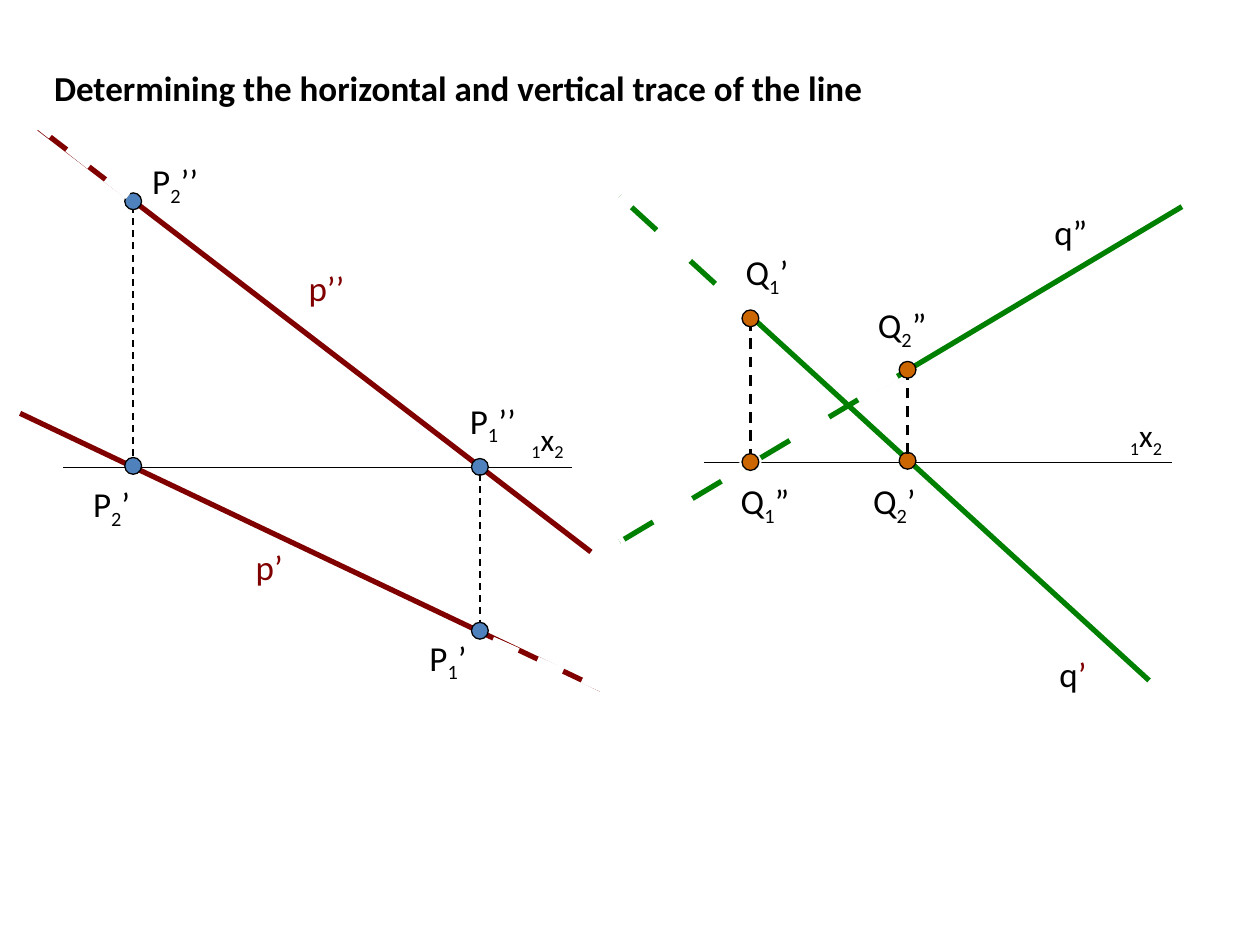
from dataclasses import dataclass

from lxml import etree
from pptx import Presentation
from pptx.dml.color import RGBColor
from pptx.enum.dml import MSO_LINE
from pptx.enum.shapes import MSO_CONNECTOR, MSO_SHAPE
from pptx.enum.text import MSO_AUTO_SIZE
from pptx.oxml.ns import qn
from pptx.util import Pt

DASH = MSO_LINE.DASH
STRAIGHT = MSO_CONNECTOR.STRAIGHT
OVAL = MSO_SHAPE.OVAL
FIT = MSO_AUTO_SIZE.SHAPE_TO_FIT_TEXT


@dataclass(frozen=True)
class Theme:
    font: str = "Calibri"
    ink: str = "000000"
    paper: str = "FFFFFF"
    red: str = "800000"
    green: str = "008000"
    blue: str = "4F81BD"
    orange: str = "CC6600"
    text: float = 20
    small: float = 18
    bold: float = 3
    hair: float = 0.75
    dot: float = 9.6


@dataclass(frozen=True)
class Line:
    x1: float
    y1: float
    x2: float
    y2: float
    color: str
    width: float
    dashed: bool = False


@dataclass(frozen=True)
class Label:
    """A caption; "_" lowers the next sign, "^" turns it red."""
    text: str
    x: float
    y: float
    width: float
    height: float = 31
    color: str = "000000"
    size: float = 20
    bold: bool = False
    fit: bool = True


@dataclass(frozen=True)
class Trace:
    """A marked point, its label and an optional vertical tie (y1, y2)."""
    x: float
    y: float
    fill: str
    label: Label
    tie: tuple[float, float] | None = None
    weight: float = 1


LOOK = Theme()


def draw_line(shapes, line: Line) -> None:
    ends = (Pt(v) for v in (line.x1, line.y1, line.x2, line.y2))
    shape = shapes.add_connector(STRAIGHT, *ends)
    shape.line.color.rgb = RGBColor.from_string(line.color)
    shape.line.width = Pt(line.width)
    if line.dashed:
        shape.line.dash_style = DASH
    etree.SubElement(shape._element.spPr, qn("a:effectLst"))


def draw_label(shapes, label: Label) -> None:
    box = shapes.add_textbox(Pt(label.x), Pt(label.y),
                             Pt(label.width), Pt(label.height))
    frame = box.text_frame
    frame.word_wrap = True
    if label.fit:
        frame.auto_size = FIT
    para = frame.paragraphs[0]
    para.font.name = LOOK.font
    para.font.size = Pt(label.size)
    para.font.bold = label.bold
    para.font.color.rgb = RGBColor.from_string(label.color)

    # Split at the marks; each mark covers one sign
    parts, mark = [["", ""]], ""
    for sign in label.text:
        if sign in "_^":
            mark = sign
        elif mark or parts[-1][0]:
            parts.append([mark, sign])
            mark = ""
        else:
            parts[-1][1] += sign
    for mark, text in parts:
        if not text:
            continue
        run = para.add_run()
        run.text = text
        if mark == "_":
            run._r.get_or_add_rPr().set("baseline", "-25000")
        elif mark == "^":
            run.font.color.rgb = RGBColor.from_string(LOOK.red)


def draw_trace(shapes, trace: Trace) -> None:
    if trace.tie:
        top, end = trace.tie
        draw_line(shapes, Line(trace.x, top, trace.x, end,
                               LOOK.ink, trace.weight, True))
    half = LOOK.dot / 2
    dot = shapes.add_shape(OVAL, Pt(trace.x - half), Pt(trace.y - half),
                           Pt(LOOK.dot), Pt(LOOK.dot))
    dot.shadow.inherit = False
    dot.fill.solid()
    dot.fill.fore_color.rgb = RGBColor.from_string(trace.fill)
    dot.line.color.rgb = RGBColor.from_string(LOOK.ink)
    dot.line.width = Pt(LOOK.hair)
    draw_label(shapes, trace.label)


DRAW = {Line: draw_line, Label: draw_label, Trace: draw_trace}

# Columns of the four traces
P1, P2, Q1, Q2 = 274.2, 76.1, 428.8, 518.6

# Parts from back to front
PARTS = [
    # Line q: axis, projections, then white dashes over the hidden parts
    Line(402.5, 264.2, 669.6, 264.2, LOOK.ink, LOOK.hair),
    Label("_1x_2", 638.6, 234, 51, 29, size=LOOK.small),
    Line(354.2, 112.3, 656.6, 388.8, LOOK.green, LOOK.bold),
    Label("q”", 595.4, 116.6, 46),
    Label("q^’", 598.3, 369.4, 45),
    Line(675.4, 118.1, 354.2, 309.6, LOOK.green, LOOK.bold),
    Line(427.7, 180, 354.2, 112.3, LOOK.paper, 6.5, True),
    Line(511.9, 213.8, 354.2, 309.6, LOOK.paper, 6.5, True),
    # Title
    Label("Determining the horizontal and vertical trace of the line",
          23.8, 34.6, 540, 39, bold=True, fit=False),
    # Line p: axis and projections
    Line(36, 267.1, 326.9, 267.1, LOOK.ink, 1),
    Label("_1x_2", 296.6, 236.2, 46, 29, size=LOOK.small),
    Line(22.3, 73.4, 337.7, 315.4, LOOK.red, LOOK.bold),
    Line(11.5, 236.2, 343.4, 393.8, LOOK.red, LOOK.bold),
    Label("p’’", 169.2, 149, 43, color=LOOK.red),
    Label("p’", 139, 308.2, 56, color=LOOK.red),
    # Traces of p
    Trace(P1, 266.8, LOOK.blue, Label("P_1’’", 261.4, 224.6, 48)),
    Trace(P1, 360.4, LOOK.blue, Label("P_1’", 238.3, 360, 43),
          (270.7, 355.7)),
    Trace(P2, 266.2, LOOK.blue, Label("P_2’", 46.1, 272.2, 47)),
    Trace(P2, 115, LOOK.blue, Label("P_2’’", 79.9, 87.8, 46),
          (260.6, 120.2)),
    # Traces of q
    Trace(Q1, 264, LOOK.orange, Label("Q_1”", 416.2, 270.7, 45)),
    Trace(Q2, 263.3, LOOK.orange, Label("Q_2’", 491.8, 270.7, 44)),
    Trace(Q2, 211.3, LOOK.orange, Label("Q_2”", 494.6, 169.9, 45),
          (259.2, 211), 1.5),
    # White dashes over the hidden parts of p
    Line(281.5, 365.8, 382.3, 410.4, LOOK.paper, 4, True),
    Line(16.6, 67.7, 73.4, 112.3, LOOK.paper, 4, True),
    Trace(Q1, 181.9, LOOK.orange, Label("Q_1’", 419, 139.7, 46),
          (182.9, 259.2), 1.5),
]


def main() -> None:
    deck = Presentation()
    deck.slide_width, deck.slide_height = Pt(720), Pt(540)
    slide = deck.slides.add_slide(deck.slide_layouts[6])
    for part in PARTS:
        DRAW[type(part)](slide.shapes, part)
    deck.save("out.pptx")


if __name__ == "__main__":
    main()
